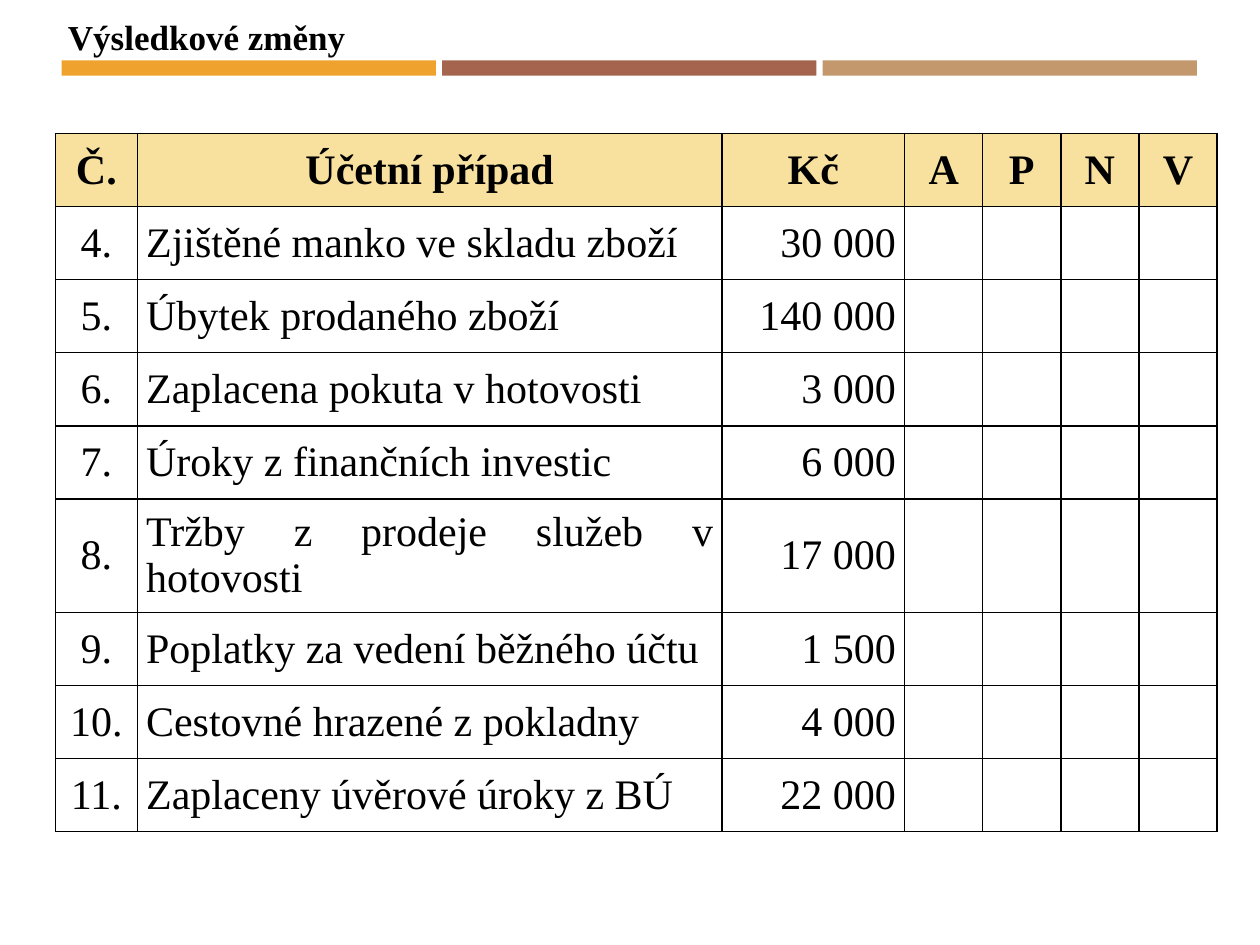
from lxml.etree import SubElement
from pptx import Presentation
from pptx.dml.color import RGBColor
from pptx.enum.shapes import MSO_SHAPE as Shape
from pptx.enum.text import MSO_ANCHOR as Anchor, MSO_AUTO_SIZE as AutoSize, PP_ALIGN as Align
from pptx.oxml.ns import qn
from pptx.util import Inches, Pt

COLORS = {
    "text": "000000",
    "border": "000000",
    "header": "F8E19F",
    "orange": "F0A22E",
    "brown": "A5644E",
    "tan": "C3986D",
}
HEADER = ["Č.", "Účetní případ", "Kč", "A", "P", "N", "V"]
CASES = [
    ("Zjištěné manko ve skladu zboží", "30 000"),
    ("Úbytek prodaného zboží", "140 000"),
    ("Zaplacena pokuta v hotovosti", "3 000"),
    ("Úroky z finančních investic", "6 000"),
    ("Tržby z prodeje služeb v hotovosti", "17 000"),
    ("Poplatky za vedení běžného účtu", "1 500"),
    ("Cestovné hrazené z pokladny", "4 000"),
    ("Zaplaceny úvěrové úroky z BÚ", "22 000"),
]
FIRST_CASE = 4
COLUMN_WIDTHS = [0.65, 4.64, 1.45] + [0.62] * 4
ROW_HEIGHTS = [0.58] * 5 + [0.9] + [0.58] * 3
BODY_ALIGNS = [Align.CENTER, Align.JUSTIFY, Align.RIGHT]


def write(frame, text, size=24, bold=False, align=None, font="Times New Roman", color="text"):
    paragraph = frame.paragraphs[0]
    paragraph.alignment = align
    run = paragraph.add_run()
    run.text = text
    run.font.name = font
    run.font.size = Pt(size)
    run.font.bold = bold
    run.font.color.rgb = RGBColor.from_string(COLORS[color])


class SlideBuilder:
    def __init__(self, slide, border_width=1):
        self.slide = slide
        self.border_width = border_width

    def bar(self, left, top, width, height, color):
        bar = self.slide.shapes.add_shape(
            Shape.RECTANGLE, Inches(left), Inches(top), Inches(width), Inches(height))
        bar.shadow.inherit = False
        bar.fill.solid()
        bar.fill.fore_color.rgb = RGBColor.from_string(COLORS[color])
        bar.line.fill.background()

    def title(self, left, top, width, height, text):
        box = self.slide.shapes.add_textbox(
            Inches(left), Inches(top), Inches(width), Inches(height))
        box.text_frame.word_wrap = False
        box.text_frame.auto_size = AutoSize.SHAPE_TO_FIT_TEXT
        write(box.text_frame, text, size=20, bold=True)

    def table(self, left, top, widths, heights, rows):
        table = self.slide.shapes.add_table(
            len(heights), len(widths), Inches(left), Inches(top),
            Inches(sum(widths)), Inches(sum(heights))).table
        table.horz_banding = False
        for column, width in zip(table.columns, widths):
            column.width = Inches(width)
        for row, height in zip(table.rows, heights):
            row.height = Inches(height)
        for r, texts in enumerate(rows):
            for c, text in enumerate(texts):
                self.cell(table.cell(r, c), text, r == 0, c)

    def cell(self, cell, text, is_header, column):
        cell.vertical_anchor = Anchor.MIDDLE
        cell.margin_left = cell.margin_right = Inches(0.07)
        cell.margin_top = cell.margin_bottom = 0
        self.borders(cell)
        if is_header:
            cell.fill.solid()
            cell.fill.fore_color.rgb = RGBColor.from_string(COLORS["header"])
        else:
            cell.fill.background()
        if text:
            align = Align.CENTER if is_header else BODY_ALIGNS[column]
            write(cell.text_frame, text, bold=is_header, align=align)

    def borders(self, cell):
        properties = cell._tc.get_or_add_tcPr()
        for side in ("a:lnL", "a:lnR", "a:lnT", "a:lnB"):
            line = SubElement(properties, qn(side), w=str(Pt(self.border_width)))
            fill = SubElement(line, qn("a:solidFill"))
            SubElement(fill, qn("a:srgbClr"), val=COLORS["border"])


def main():
    presentation = Presentation()
    presentation.slide_width = Inches(10)
    presentation.slide_height = Inches(7.5)
    builder = SlideBuilder(presentation.slides.add_slide(presentation.slide_layouts[6]))

    # Coloured bars under the heading
    for i, color in enumerate(("orange", "brown", "tan")):
        builder.bar(0.49 + i * 3.02, 0.48, 2.97, 0.12, color)

    # Heading
    builder.title(0.44, 0.07, 2.42, 0.44, "Výsledkové změny")

    # Accounting cases, with the last four columns left to fill in
    rows = [HEADER] + [
        [f"{number}.", case, amount] + [""] * 4
        for number, (case, amount) in enumerate(CASES, FIRST_CASE)
    ]
    builder.table(0.44, 1.06, COLUMN_WIDTHS, ROW_HEIGHTS, rows)

    presentation.save("out.pptx")


if __name__ == "__main__":
    main()
